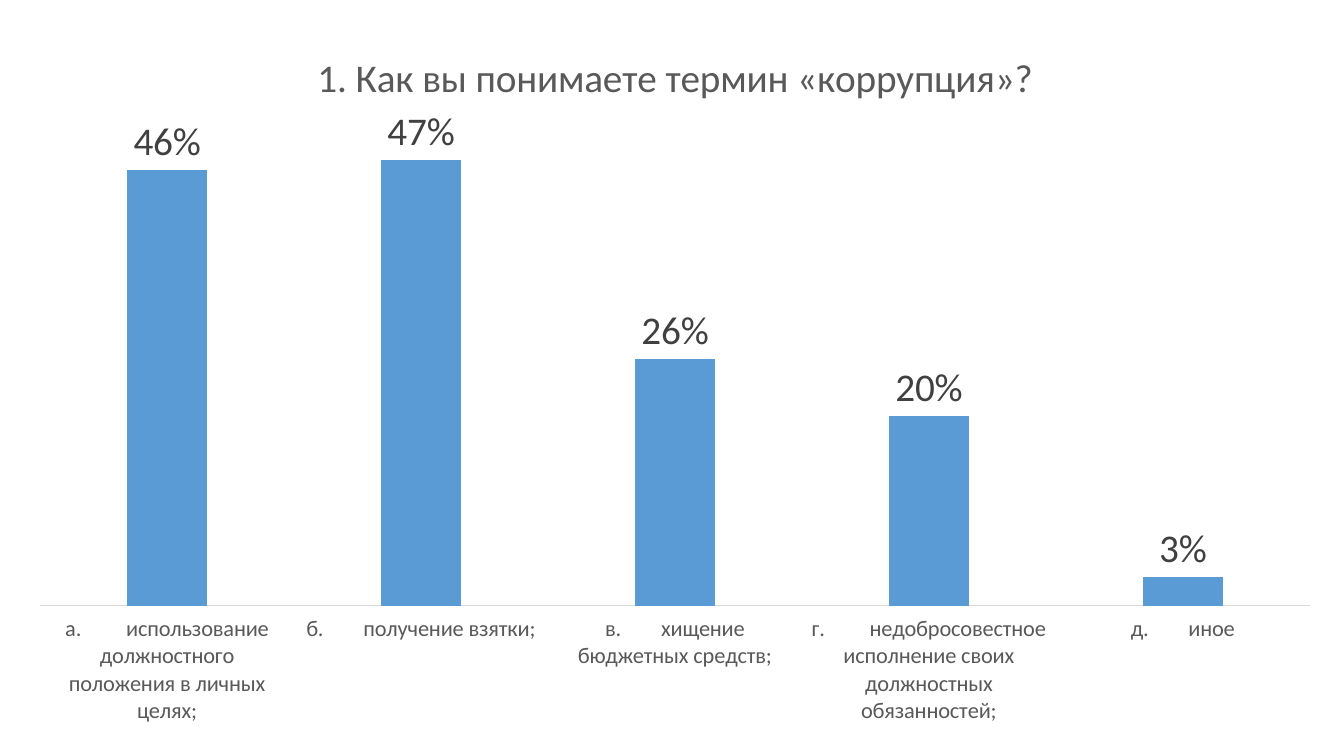
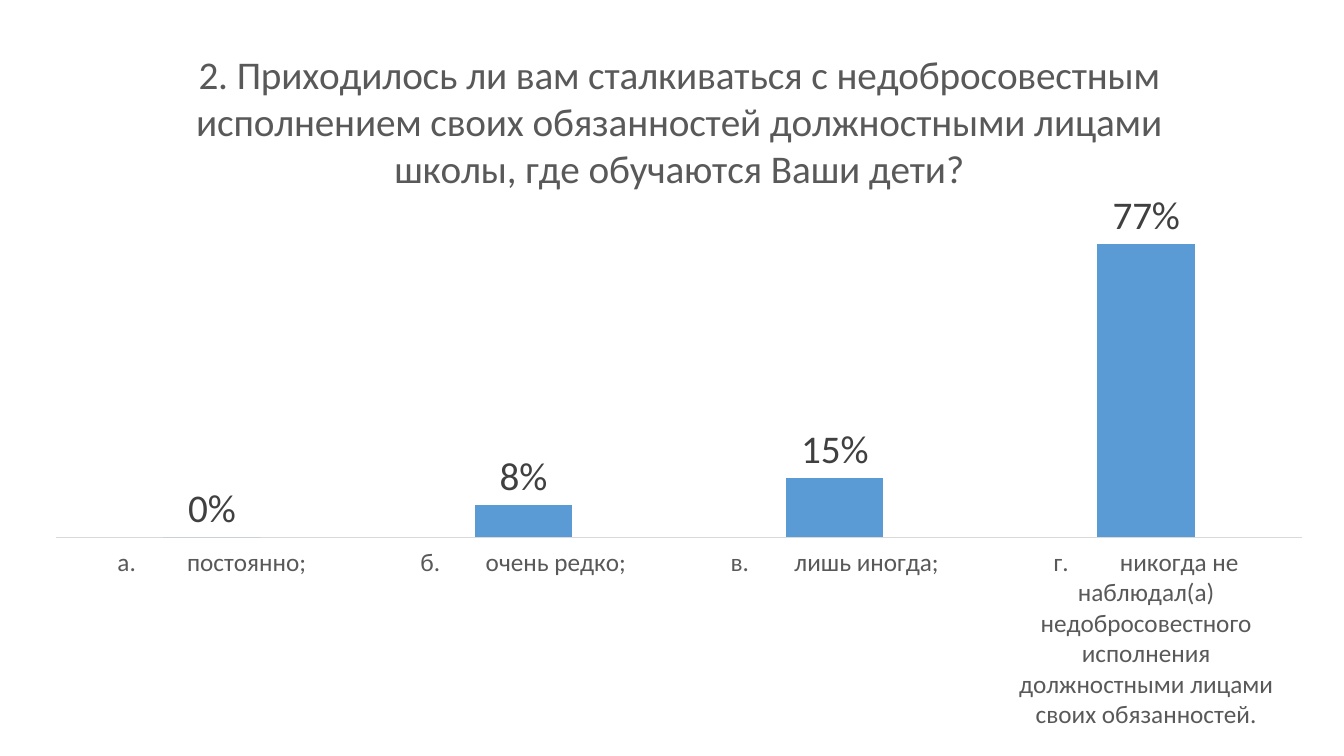
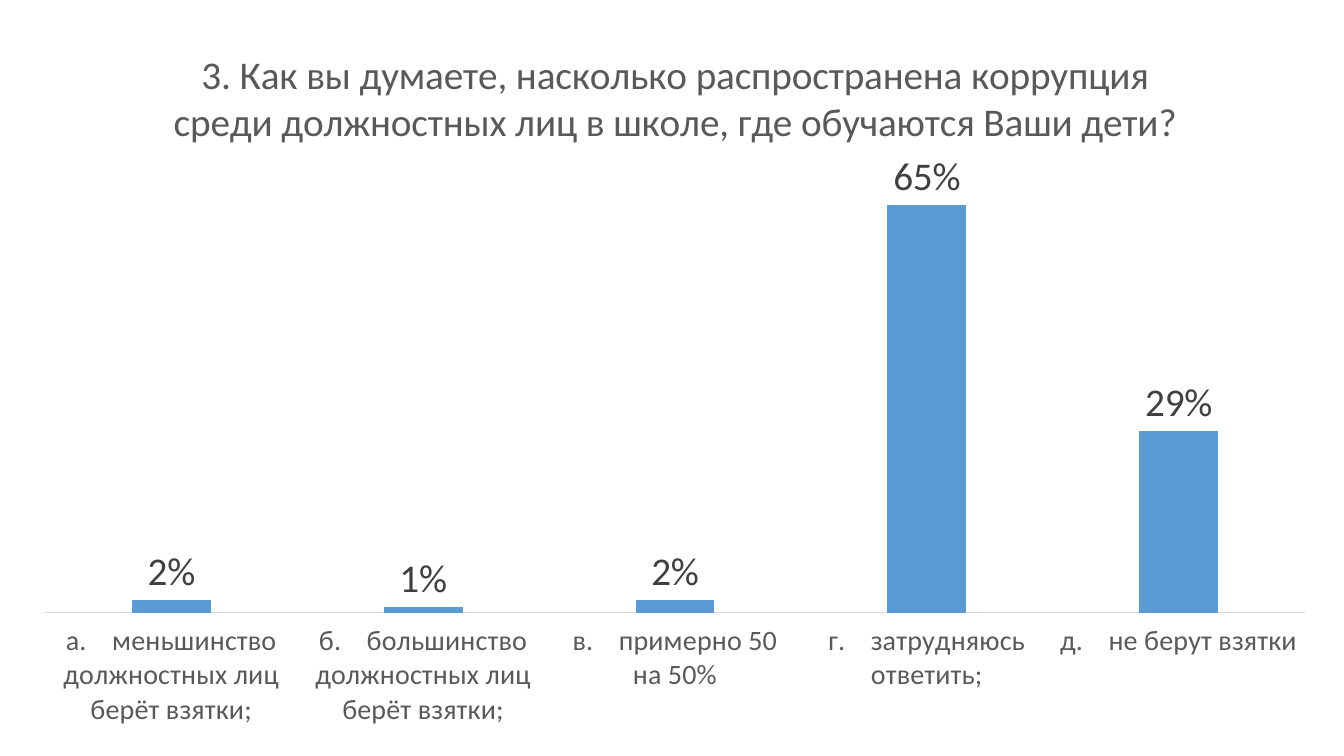
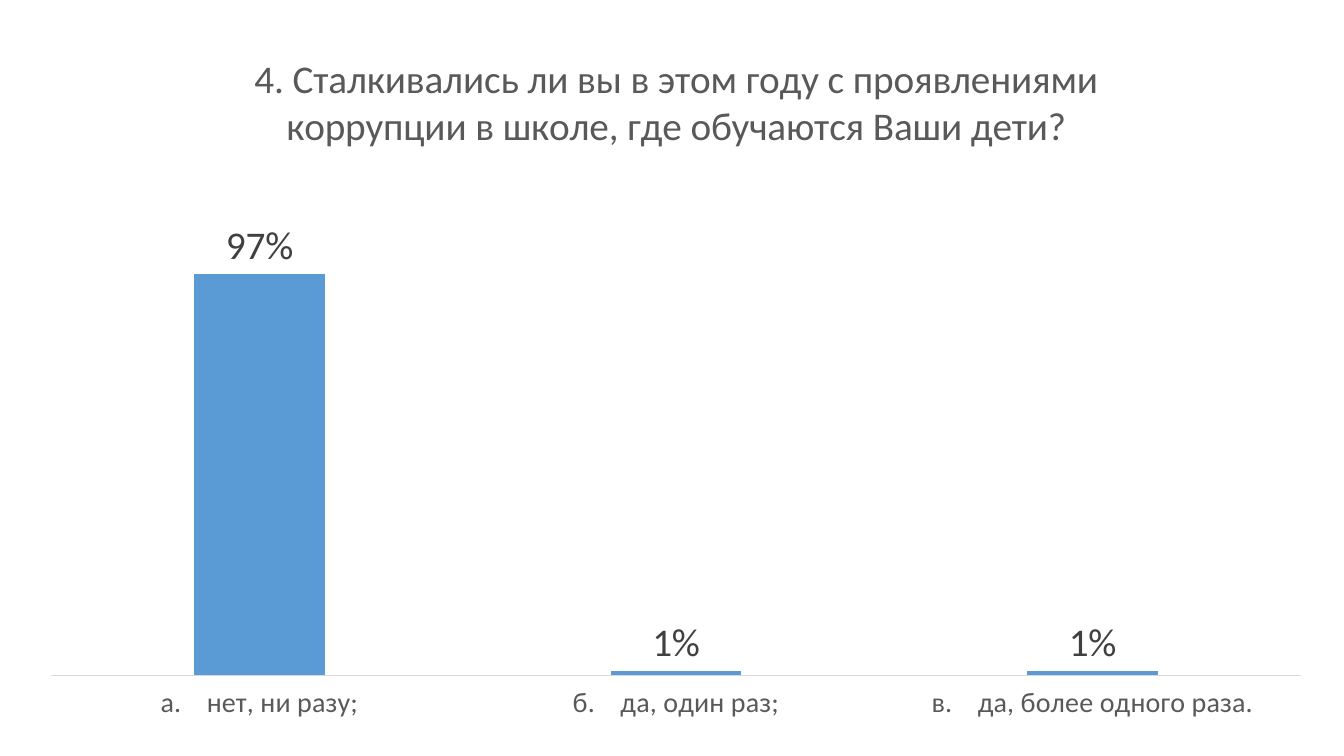
from dataclasses import dataclass

from pptx import Presentation
from pptx.chart.data import CategoryChartData
from pptx.dml.color import RGBColor
from pptx.enum.chart import XL_CHART_TYPE, XL_LABEL_POSITION, XL_TICK_LABEL_POSITION, XL_TICK_MARK
from pptx.oxml import parse_xml
from pptx.oxml.ns import nsdecls
from pptx.util import Inches, Pt

COLUMNS = XL_CHART_TYPE.COLUMN_CLUSTERED
OUTSIDE_END = XL_LABEL_POSITION.OUTSIDE_END
LOW = XL_TICK_LABEL_POSITION.LOW
NO_TICK = XL_TICK_MARK.NONE
NO_BREAK_SPACE = chr(160)
LETTERS = "абвгд"

# Content: frame is left, top, width, height in inches; plot_rows its top and bottom;
# margin is the share of the chart left free on either side of the plot;
# gaps are the widths of the space after each answer letter.
QUESTIONS = [
    {
        "title": "1. Как вы понимаете термин «коррупция»?",
        "answers": [
            ("использование должностного положения в личных целях;", 0.46),
            ("получение взятки;", 0.47),
            ("хищение бюджетных средств;", 0.26),
            ("недобросовестное исполнение своих должностных обязанностей;", 0.2),
            ("иное", 0.03),
        ],
        "gaps": (8, 7, 7, 8, 7), "answer_size": 16, "top_value": 0.5,
        "frame": (0.27, 0.24, 12.85, 7.09), "plot_rows": (1.31, 6.01), "margin": 0.01,
    },
    {
        "title": "2. Приходилось ли вам сталкиваться с недобросовестным исполнением "
                 "своих обязанностей должностными лицами школы, где обучаются Ваши дети?",
        "answers": [
            ("постоянно;", 0),
            ("очень редко;", 0.08),
            ("лишь иногда;", 0.15),
            ("никогда не наблюдал(а) недобросовестного исполнения "
             "должностными лицами своих обязанностей.", 0.74),
        ],
        "own_labels": {3: "77%"},
        "gaps": (8, 7, 7, 8), "answer_size": 18, "top_value": 0.8,
        "frame": (0.3, 0.21, 12.87, 7.12), "plot_rows": (2.18, 5.33), "margin": 0.02,
    },
    {
        "title": "3. Как вы думаете, насколько распространена коррупция "
                 "среди должностных лиц в школе, где обучаются Ваши дети?",
        "answers": [
            ("меньшинство должностных лиц берёт взятки;", 0.02),
            ("большинство должностных лиц берёт взятки;", 0.01),
            ("примерно 50 на 50%", 0.02),
            ("затрудняюсь ответить;", 0.65),
            ("не берут взятки", 0.29),
        ],
        "gaps": (3,) * 5, "answer_size": 20, "top_value": 0.7,
        "frame": (0.19, 0.21, 13.01, 7.09), "plot_rows": (1.72, 6.08), "margin": 0.02,
    },
    {
        "title": "4. Сталкивались ли вы в этом году с проявлениями коррупции "
                 "в школе, где обучаются Ваши дети?",
        "answers": [
            ("нет, ни разу;", 0.97),
            ("да, один раз;", 0.01),
            ("да, более одного раза.", 0.01),
        ],
        "gaps": (3,) * 3, "answer_size": 20, "top_value": 1.2,
        "frame": (0.25, 0.25, 12.91, 6.97), "plot_rows": (1.77, 6.7), "margin": 0.02,
    },
]


@dataclass(frozen=True)
class Theme:
    font: str = "Calibri"
    heading_size: int = 28
    base_size: int = 10
    base: RGBColor = RGBColor(0, 0, 0)
    bar: RGBColor = RGBColor(0x5B, 0x9B, 0xD5)
    text: RGBColor = RGBColor(0x59, 0x59, 0x59)
    value: RGBColor = RGBColor(0x40, 0x40, 0x40)
    axis: RGBColor = RGBColor(0xD9, 0xD9, 0xD9)


THEME = Theme()


def style_font(font, size, color):
    font.name, font.size, font.bold = THEME.font, Pt(size), False
    font.color.rgb = color


def place_plot(chart, question):
    """Fix the inner plot area, in shares of the chart frame."""
    top, height = question["frame"][1], question["frame"][3]
    first, last = question["plot_rows"]
    margin = question["margin"]
    shares = {"x": margin, "y": (first - top) / height,
              "w": 1 - 2 * margin, "h": (last - first) / height}
    modes = "".join(f'<c:{key}Mode val="edge"/>' for key in "xy")
    sizes = "".join(f'<c:{key} val="{share:.4f}"/>' for key, share in shares.items())
    layout = parse_xml(f'<c:layout {nsdecls("c")}><c:manualLayout><c:layoutTarget val="inner"/>'
                       f'{modes}{sizes}</c:manualLayout></c:layout>')
    area = chart.element.chart.plotArea
    for old in area.findall(layout.tag):
        area.remove(old)
    area.insert(0, layout)


def add_title(chart, title):
    chart.has_title = True
    chart.chart_title.include_in_layout = False
    para = chart.chart_title.text_frame.paragraphs[0]
    para.text = title
    style_font(para.font, THEME.heading_size, THEME.text)


def style_axes(chart, question):
    answers = chart.category_axis
    answers.major_tick_mark = answers.minor_tick_mark = NO_TICK
    answers.tick_label_position = LOW
    answers.has_major_gridlines = False
    answers.format.line.color.rgb = THEME.axis
    answers.format.line.width = Pt(0.75)
    style_font(answers.tick_labels.font, question["answer_size"], THEME.text)
    shares = chart.value_axis
    shares.minimum_scale, shares.maximum_scale = 0, question["top_value"]
    shares.has_major_gridlines = False
    shares.visible = False


def style_bars(chart, own_labels):
    plot = chart.plots[0]
    plot.gap_width, plot.overlap = 219, -27
    plot.vary_by_categories = False
    series = plot.series[0]
    series.format.fill.solid()
    series.format.fill.fore_color.rgb = THEME.bar
    labels = series.data_labels
    labels.show_value = True
    labels.number_format, labels.number_format_is_linked = "0%", False
    labels.position = OUTSIDE_END
    style_font(labels.font, THEME.heading_size, THEME.value)
    for index, text in own_labels.items():
        label = series.points[index].data_label
        span = label.text_frame.paragraphs[0].add_run()
        span.text = text
        style_font(span.font, THEME.heading_size, THEME.value)
        label.position = OUTSIDE_END


def add_question(deck, question):
    page = deck.slides.add_slide(deck.slide_layouts[6])
    data = CategoryChartData(number_format="0%")
    data.categories = [f"{letter}.{NO_BREAK_SPACE * gap} {answer}" for letter, gap, (answer, _)
                       in zip(LETTERS, question["gaps"], question["answers"])]
    data.add_series("Series 1", [share for _, share in question["answers"]])
    frame = [Inches(length) for length in question["frame"]]
    chart = page.shapes.add_chart(COLUMNS, *frame, data).chart
    chart.has_legend = False
    style_font(chart.font, THEME.base_size, THEME.base)
    add_title(chart, question["title"])
    place_plot(chart, question)
    style_axes(chart, question)
    style_bars(chart, question.get("own_labels", {}))


def main():
    deck = Presentation()
    deck.slide_width, deck.slide_height = Inches(13.33), Inches(7.5)
    for question in QUESTIONS:
        add_question(deck, question)
    deck.save("out.pptx")


if __name__ == "__main__":
    main()
